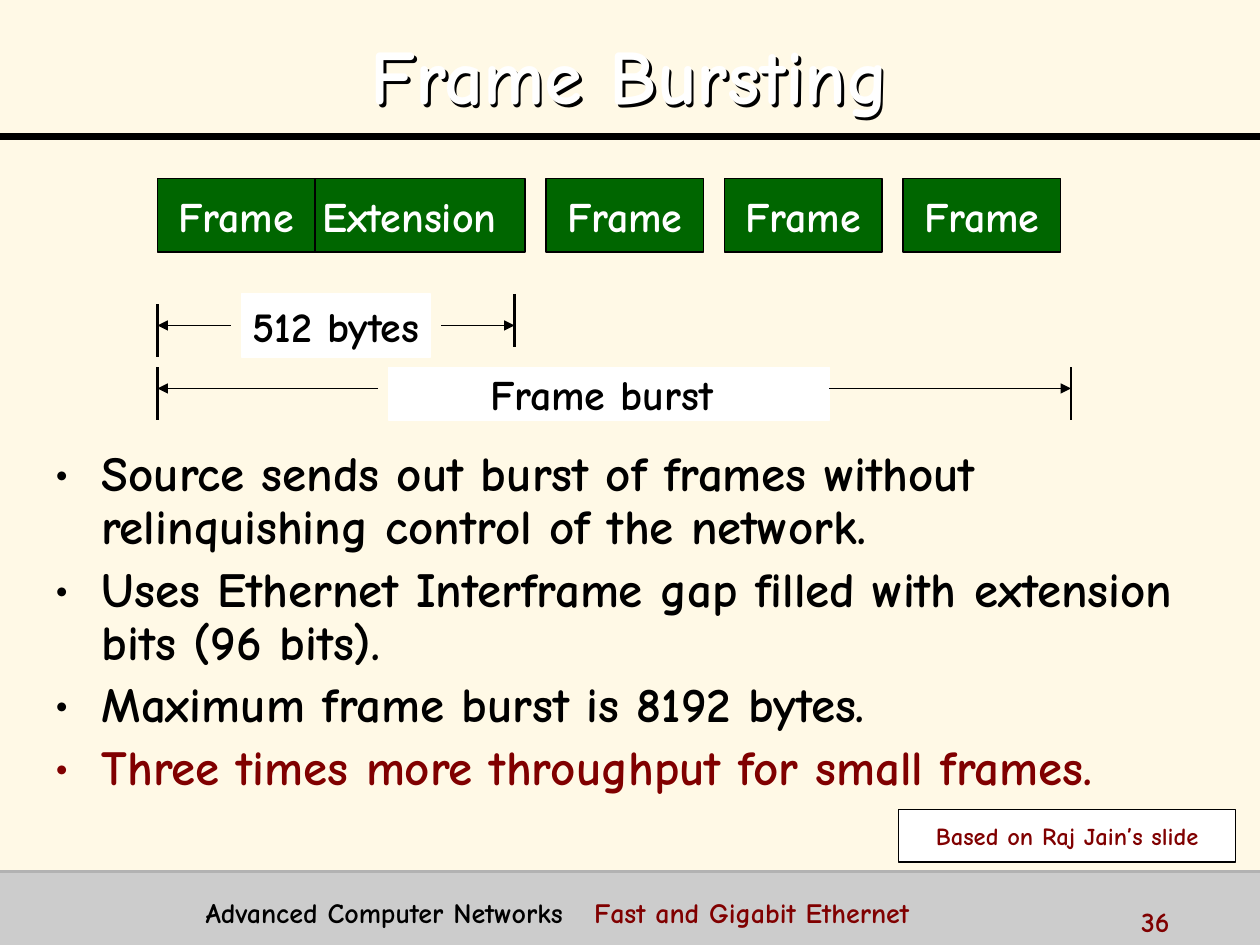
from dataclasses import dataclass

import lxml.etree
import pptx
import pptx.dml.color
import pptx.enum.shapes
import pptx.enum.text
import pptx.oxml.ns
import pptx.util

PX = 7620  # 120 px to the inch
ALIGN = pptx.enum.text.PP_ALIGN
ANCHOR = pptx.enum.text.MSO_ANCHOR
RECTANGLE = pptx.enum.shapes.MSO_SHAPE.RECTANGLE


@dataclass(frozen=True)
class Theme:
    font: str = "Comic Neue"
    background: str = "FFF9E6"
    ink: str = "000000"
    white: str = "FFFFFF"
    accent: str = "800000"
    frame: str = "006600"
    footer: str = "CCCCCC"
    footer_rule: str = "B2B2B2"
    title_size: int = 44
    body_size: int = 28
    label_size: int = 24
    footer_size: int = 16
    credit_size: int = 14


THEME = Theme()


def px(length):
    return pptx.util.Emu(length * PX)


def rgb(color):
    return pptx.dml.color.RGBColor.from_string(color)


def add_element(parent, tag, **attributes):
    return lxml.etree.SubElement(parent, pptx.oxml.ns.qn(tag), attributes)


def write(paragraph, text, size, color=THEME.ink, align=ALIGN.LEFT):
    paragraph.alignment = align
    run = paragraph.add_run()
    run.text = text
    run.font.name = THEME.font
    run.font.size = pptx.util.Pt(size)
    run.font.bold = True
    run.font.color.rgb = rgb(color)


def add_text_box(slide, box, anchor=ANCHOR.TOP):
    shape = slide.shapes.add_textbox(*map(px, box))
    shape.text_frame.word_wrap = True
    shape.text_frame.vertical_anchor = anchor
    return shape


def add_box(slide, box, fill, line=None, text="", size=THEME.label_size, color=THEME.ink):
    shape = slide.shapes.add_shape(RECTANGLE, *map(px, box))
    shape.shadow.inherit = False
    shape.fill.solid()
    shape.fill.fore_color.rgb = rgb(fill)
    if line:
        shape.line.color.rgb = rgb(line)
        shape.line.width = pptx.util.Pt(0.75)
    else:
        shape.line.fill.background()
    if text:
        frame = shape.text_frame
        frame.word_wrap = False
        frame.vertical_anchor = ANCHOR.MIDDLE
        write(frame.paragraphs[0], text, size, color, ALIGN.CENTER)


def add_line(slide, start, end, width, color=THEME.ink, arrow=False):
    line = slide.shapes.add_connector(
        pptx.enum.shapes.MSO_CONNECTOR.STRAIGHT, *map(px, (*start, *end)))
    line.line.color.rgb = rgb(color)
    line.line.width = pptx.util.Pt(width)
    if arrow:
        add_element(line.line._get_or_add_ln(), "a:tailEnd", type="triangle")
    add_element(line._element.spPr, "a:effectLst")


def add_header(slide, left, top, width, height):
    add_line(slide, (left, top + height), (left + width, top + height), 4)
    title = add_text_box(slide, (left + 90, top + 16, width - 180, 100), ANCHOR.MIDDLE)
    paragraph = title.text_frame.paragraphs[0]
    paragraph.line_spacing = 1.1
    write(paragraph, "Frame Bursting", THEME.title_size, THEME.white, ALIGN.CENTER)
    # The box has no fill, so its shadow falls from the letters
    effects = add_element(title._element.spPr, "a:effectLst")
    shadow = add_element(effects, "a:outerShdw", dist="25400", dir="2700000")
    add_element(shadow, "a:srgbClr", val=THEME.ink)


def add_frames(slide, left, top, width, height):
    frame_width, gap = 150, 20
    pitch = frame_width + gap
    blocks = [("Extension", left + 130, 220), ("Frame", left, frame_width)]
    first = left + width - 2 * pitch - frame_width
    blocks += [("Frame", first + index * pitch, frame_width) for index in range(3)]
    for text, block_left, block_width in blocks:
        add_box(slide, (block_left, top, block_width, height),
                THEME.frame, THEME.ink, text, color=THEME.white)


def add_measure(slide, left, top, width, text, label, arrow_y, inner, ticks):
    """Label between two ticks; inner gives the arrows' start points."""
    right = left + width
    for x, tick_top in zip((left, right), ticks):
        add_line(slide, (x, top + tick_top), (x, top + tick_top + 50), 1.5)
    label_left, label_width, label_height = label
    add_box(slide, (left + label_left, top, label_width, label_height),
            THEME.white, THEME.white, text)
    for start, end in zip(inner, (left, right)):
        add_line(slide, (left + start, top + arrow_y), (end, top + arrow_y), 0.75, arrow=True)


def add_bullets(slide, left, top, width, height):
    points = [
        ("Source sends out burst of frames without relinquishing control of the network.", THEME.ink),
        ("Uses Ethernet Interframe gap filled with extension bits (96 bits).", THEME.ink),
        ("Maximum frame burst is 8192 bytes.", THEME.ink),
        ("Three times more throughput for small frames.", THEME.accent),
    ]
    frame = add_text_box(slide, (left, top, width, height)).text_frame
    for index, (text, color) in enumerate(points):
        paragraph = frame.add_paragraph() if index else frame.paragraphs[0]
        paragraph.line_spacing = 0.9
        if index:
            paragraph.space_before = pptx.util.Pt(5.6)
        properties = paragraph._p.get_or_add_pPr()
        properties.set("marL", str(px(45)))
        properties.set("indent", str(px(-45)))
        add_element(properties, "a:buFont", typeface=THEME.font)
        add_element(properties, "a:buChar", char="•")
        write(paragraph, text, THEME.body_size, color)


def add_footer(slide, left, top, width, height):
    add_box(slide, (left, top, width, height), THEME.footer)
    add_line(slide, (left, top), (left + width, top), 2, THEME.footer_rule)
    # Course and topic, set apart by a tab stop
    course = add_text_box(slide, (left + 184, top + 17, 874, 37)).text_frame.paragraphs[0]
    tabs = add_element(course._p.get_or_add_pPr(), "a:tabLst")
    add_element(tabs, "a:tab", pos=str(px(370)), algn="l")
    write(course, "Advanced Computer Networks\t", THEME.footer_size)
    write(course, "Fast and Gigabit Ethernet", THEME.footer_size, THEME.accent)
    # Slide number
    number = add_text_box(slide, (left + 1075, top + 26, 120, 30)).text_frame.paragraphs[0]
    write(number, "36", THEME.footer_size, THEME.accent)


def main():
    presentation = pptx.Presentation()
    presentation.slide_width, presentation.slide_height = px(1200), px(900)
    slide = presentation.slides.add_slide(presentation.slide_layouts[6])
    slide.background.fill.solid()
    slide.background.fill.fore_color.rgb = rgb(THEME.background)

    add_footer(slide, 0, 830, 1200, 70)
    add_header(slide, 0, 0, 1200, 130)
    add_frames(slide, 150, 170, 860, 70)
    add_measure(slide, 150, 280, 340, "512 bytes", label=(80, 180, 60),
                arrow_y=30, inner=(70, 270), ticks=(10, 0))
    add_measure(slide, 150, 350, 870, "Frame burst ", label=(220, 420, 50),
                arrow_y=20, inner=(210, 640), ticks=(0, 0))
    add_bullets(slide, 40, 422, 1110, 370)
    add_box(slide, (856, 771, 321, 50), THEME.white, THEME.ink,
            "Based on Raj Jain’s slide", THEME.credit_size, THEME.accent)
    presentation.save("out.pptx")


if __name__ == "__main__":
    main()
